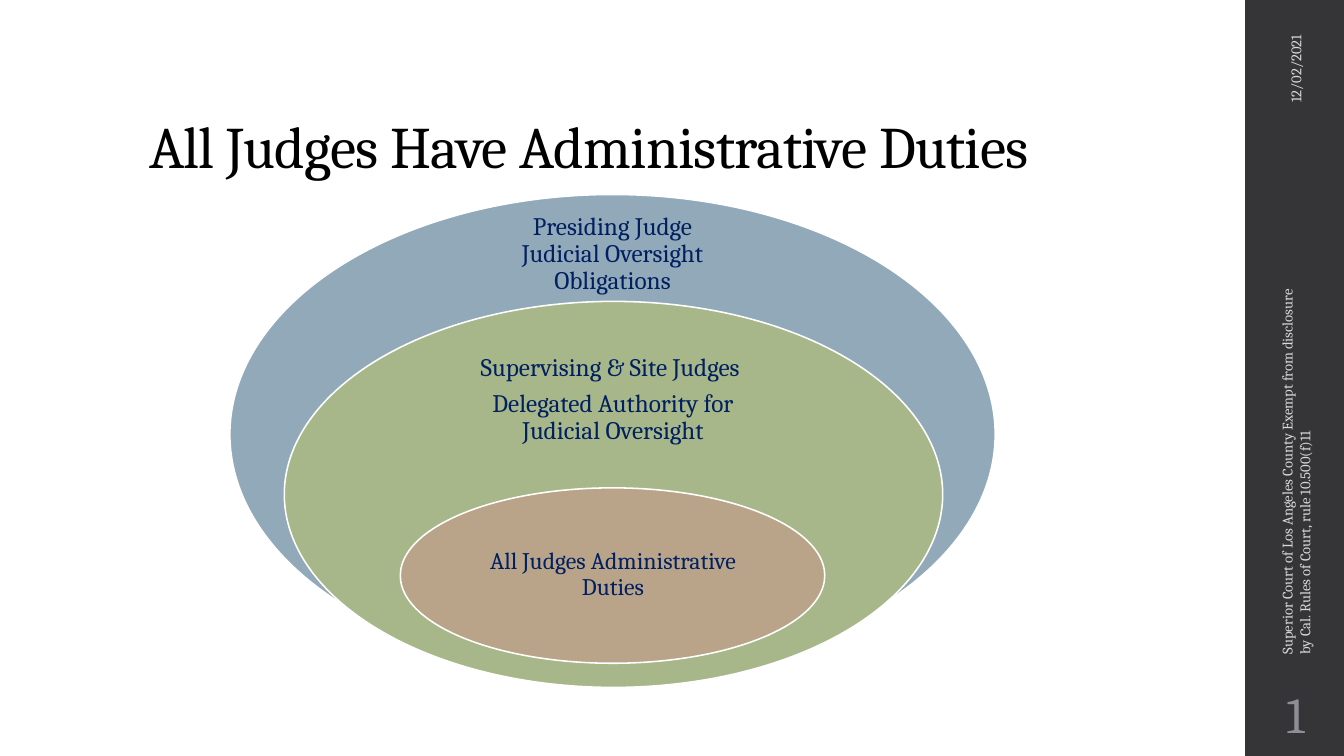
import pptx
import pptx.util
import pptx.dml.color
import pptx.enum.shapes
import pptx.enum.text

Inches, Pt = pptx.util.Inches, pptx.util.Pt
RGB = pptx.dml.color.RGBColor
SHAPE = pptx.enum.shapes.MSO_SHAPE
ALIGN = pptx.enum.text.PP_ALIGN
ANCHOR = pptx.enum.text.MSO_ANCHOR

COLORS = {
    "band": "353537", "title": "000000", "label": "002060", "line": "FFFFFF",
    "presiding": "92A9B9", "supervising": "A7B789", "all": "B9A489",
    "footer": "D9D9DB", "number": "8E8E94",
}

prs = pptx.Presentation()
prs.slide_width, prs.slide_height = Inches(13.33), Inches(7.5)
s = prs.slides.add_slide(prs.slide_layouts[6])


def add_fill_shape(kind, box, color):
    sp = s.shapes.add_shape(kind, *map(Inches, box))
    sp.shadow.inherit = False
    sp.fill.solid()
    sp.fill.fore_color.rgb = RGB.from_string(COLORS[color])
    sp.line.fill.background()
    return sp


def add_text(box, lines, size, color, align=ALIGN.LEFT, anchor=ANCHOR.MIDDLE,
             inset=None, spacing=None, after=0, rotation=0):
    sp = s.shapes.add_textbox(*map(Inches, box))
    sp.rotation = rotation
    tf = sp.text_frame
    tf.word_wrap = True
    tf.vertical_anchor = anchor
    if inset is not None:
        tf.margin_left = tf.margin_right = Inches(inset)
        tf.margin_top = tf.margin_bottom = Inches(inset)
    tf.text = "\n".join(lines)
    for p in tf.paragraphs:
        p.alignment = align
        p.line_spacing = spacing
        p.space_after = Pt(after)
        p.font.size = Pt(size)
        p.font.name = "Cambria"
        p.font.color.rgb = RGB.from_string(COLORS[color])
    return sp


# Side band and title
add_fill_shape(SHAPE.RECTANGLE, (12.35, 0, 1, 7.5), "band")
title = add_text((1.38, 0.4, 10.6, 1.45), ["All Judges Have Administrative Duties"],
                 42, "title", anchor=ANCHOR.BOTTOM, spacing=0.9)
title.text_frame.paragraphs[0].runs[0].font._element.set("spc", "-50")

# Nested ellipses with their labels, outermost first
levels = [
    ("presiding", (2.28, 1.93, 7.59, 4.76), (4.75, 2.17, 2.65, 0.71), 18, 0.14,
     ["Presiding Judge Judicial Oversight Obligations"]),
    ("supervising", (2.82, 2.99, 6.53, 3.83), (4.56, 3.61, 3.04, 0.72), 18, 0.14,
     ["Supervising & Site Judges ", "Delegated Authority for Judicial Oversight"]),
    ("all", (3.97, 4.84, 4.21, 1.74), (4.59, 5.27, 2.98, 0.87), 17, 0.13,
     ["All Judges Administrative Duties"]),
]
for color, oval_box, label_box, size, inset, lines in levels:
    oval = add_fill_shape(SHAPE.OVAL, oval_box, color)
    oval.line.color.rgb = RGB.from_string(COLORS["line"])
    oval.line.width = Pt(1.1)
    add_text(label_box, lines, size, "label", align=ALIGN.CENTER,
             inset=inset, spacing=0.9, after=0.35 * size)

# Date, footer and slide number on the band
add_text((11.81, 1.09, 2.08, 0.4), ["12/02/2021"], 10.5, "footer",
         align=ALIGN.RIGHT, rotation=270)
add_text((10.89, 4.43, 3.92, 0.4),
         ["Superior Court of Los Angeles County Exempt from disclosure "
          "by Cal. Rules of Court, rule 10.500(f)11"],
         10.5, "footer", rotation=270)
add_text((12.35, 6.75, 1, 0.65), ["1"], 36, "number", align=ALIGN.CENTER, inset=0.05)

prs.save("out.pptx")
